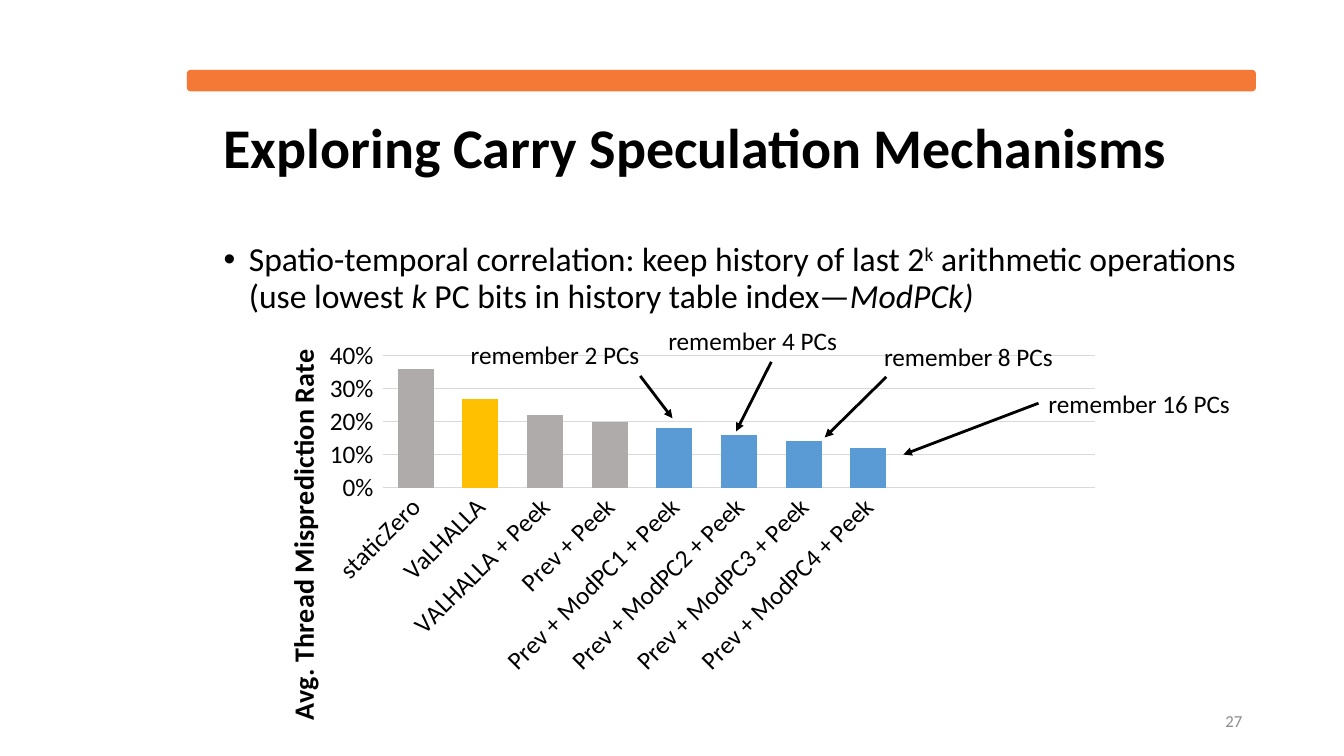
import dataclasses
import pptx
import pptx.chart.data
import pptx.dml.color
import pptx.enum.chart
import pptx.enum.shapes
import pptx.enum.text
import pptx.oxml
import pptx.oxml.ns
import pptx.util

ROWS = 75
CELL = pptx.util.Inches(7.5) / ROWS


@dataclasses.dataclass(frozen=True)
class Theme:
    font: str = "Calibri"
    ink: str = "000000"
    accent: str = "F47836"
    muted: str = "8C8C8C"
    grid: str = "D9D9D9"
    bar: str = "5B9BD5"
    baseline_bar: str = "AFABAB"
    highlight_bar: str = "FFC000"
    title: int = 40
    body: int = 24
    axis_title: int = 20
    label: int = 18
    number: int = 12


THEME = Theme()
ANCHOR = pptx.enum.text.MSO_ANCHOR
RATES = [
    ("staticZero", 0.36),
    ("VaLHALLA", 0.27),
    ("VALHALLA + Peek", 0.22),
    ("Prev + Peek", 0.2),
    ("Prev + ModPC1 + Peek", 0.18),
    ("Prev + ModPC2 + Peek", 0.16),
    ("Prev + ModPC3 + Peek", 0.14),
    ("Prev + ModPC4 + Peek", 0.12),
] + [("", None)] * 3
POINT_COLORS = [THEME.baseline_bar, THEME.highlight_bar, THEME.baseline_bar, THEME.baseline_bar]
CALLOUTS = [
    ("remember 2 PCs", (45.7, 33.2, 19, 4), (63.5, 37.3), (66.7, 41.5)),
    ("remember 4 PCs", (65.3, 31.8, 19, 4), (76.5, 35.9), (73, 42.8)),
    ("remember 8 PCs", (86.7, 33.4, 19, 4), (87.9, 37.4), (81.8, 43.4)),
    ("remember 16 PCs", (103, 38, 20.2, 4), None, (89.6, 45.1)),
]


def cells(*counts):
    return [pptx.util.Emu(round(count * CELL)) for count in counts]


def rgb(color):
    return pptx.dml.color.RGBColor.from_string(color)


def style(font, size, color=THEME.ink, bold=False):
    font.name = THEME.font
    font.size = pptx.util.Pt(size)
    font.bold = bold
    font.color.rgb = rgb(color)


def add_child(parent, tag, **attributes):
    child = pptx.oxml.parse_xml(f"<{tag} {pptx.oxml.ns.nsdecls(tag.split(':')[0])}/>")
    for name, value in attributes.items():
        child.set(name, str(value))
    parent.append(child)
    return child


def add_text(page, text, at, size, color=THEME.ink, bold=False, anchor=ANCHOR.TOP, wrap=True):
    box = page.shapes.add_textbox(*cells(*at))
    frame = box.text_frame
    frame.word_wrap = wrap
    frame.vertical_anchor = anchor
    if not wrap:
        frame.auto_size = pptx.enum.text.MSO_AUTO_SIZE.SHAPE_TO_FIT_TEXT
    para = frame.paragraphs[0]
    para.text = text
    style(para.font, size, color, bold)
    return box


def add_banner(page, at):
    banner = page.shapes.add_shape(pptx.enum.shapes.MSO_SHAPE.ROUNDED_RECTANGLE, *cells(*at))
    banner.shadow.inherit = False
    banner.fill.solid()
    banner.fill.fore_color.rgb = rgb(THEME.accent)
    banner.line.color.rgb = rgb(THEME.accent)
    banner.line.width = pptx.util.Pt(1)


def add_bullet(page, at):
    box = page.shapes.add_textbox(*cells(*at))
    box.text_frame.word_wrap = True
    para = box.text_frame.paragraphs[0]
    para.line_spacing = 0.9
    properties = para._p.get_or_add_pPr()
    indent = pptx.util.Inches(0.25)
    properties.set("marL", str(indent))
    properties.set("indent", str(-indent))
    add_child(properties, "a:buFont", typeface="Arial")
    add_child(properties, "a:buChar", char="•")
    style(para.font, THEME.body)
    para.add_run().text = "Spatio-temporal correlation: keep history of last 2"
    exponent = para.add_run()
    exponent.text = "k"
    exponent.font._element.set("baseline", "30000")
    para.add_run().text = " arithmetic operations"
    para.add_line_break()
    for text, italic in [
        ("(use lowest ", False),
        ("k", True),
        (" PC bits in history table index—", False),
        ("ModPCk)", True),
    ]:
        span = para.add_run()
        span.text = text
        span.font.italic = italic


def place(element, index, **shares):
    layout = element.find(pptx.oxml.ns.qn("c:layout"))
    if layout is None:
        layout = add_child(element, "c:layout")
        element.insert(index, layout)
    manual = add_child(layout, "c:manualLayout")
    if "w" in shares:
        add_child(manual, "c:layoutTarget", val="inner")
    for side in ("x", "y"):
        add_child(manual, f"c:{side}Mode", val="edge")
    for side, share in shares.items():
        add_child(manual, f"c:{side}", val=share)


def style_value_axis(axis):
    axis.minimum_scale = 0
    axis.maximum_scale = 0.4
    axis.major_unit = 0.1
    axis.tick_labels.number_format = "0%"
    axis.tick_labels.number_format_is_linked = False
    style(axis.tick_labels.font, THEME.label)
    axis.format.line.fill.background()
    axis.major_gridlines.format.line.color.rgb = rgb(THEME.grid)
    axis.major_gridlines.format.line.width = pptx.util.Pt(0.75)
    frame = axis.axis_title.text_frame
    frame.text = "Avg. Thread Misprediction Rate"
    style(frame.paragraphs[0].font, THEME.axis_title, bold=True)
    frame._txBody.bodyPr.set("rot", "-5400000")
    frame._txBody.bodyPr.set("vert", "horz")
    place(axis.axis_title._element, 1, x=0.02, y=0.02)


def style_category_axis(axis):
    axis.major_tick_mark = pptx.enum.chart.XL_TICK_MARK.NONE
    style(axis.tick_labels.font, THEME.label)
    axis.format.line.color.rgb = rgb(THEME.grid)
    axis.format.line.width = pptx.util.Pt(0.75)
    axis._element.txPr.bodyPr.set("rot", "-2700000")


def add_rate_chart(page, at):
    data = pptx.chart.data.CategoryChartData(number_format="0%")
    data.categories = [name for name, rate in RATES]
    data.add_series("Series 1", [rate for name, rate in RATES])
    kind = pptx.enum.chart.XL_CHART_TYPE.COLUMN_CLUSTERED
    chart = page.shapes.add_chart(kind, *cells(*at), data).chart
    chart.has_legend = False
    chart.has_title = False
    style(chart.font, THEME.label)
    plot = chart.plots[0]
    plot.gap_width = 80
    plot.vary_by_categories = False
    series = plot.series[0]
    series.format.fill.solid()
    series.format.fill.fore_color.rgb = rgb(THEME.bar)
    for index, color in enumerate(POINT_COLORS):
        fill = series.points[index].format.fill
        fill.solid()
        fill.fore_color.rgb = rgb(color)
    style_value_axis(chart.value_axis)
    style_category_axis(chart.category_axis)
    place(plot._element.getparent(), 0, x=0.144, y=0.04, w=0.838, h=0.23)


def add_callout(page, text, at, start, tip):
    label = add_text(page, text, at, THEME.label, wrap=False)
    straight = pptx.enum.shapes.MSO_CONNECTOR.STRAIGHT
    arrow = page.shapes.add_connector(straight, *cells(*(start or at[:2]), *tip))
    if start is None:
        arrow.begin_connect(label, 1)
    arrow.line.color.rgb = rgb(THEME.ink)
    arrow.line.width = pptx.util.Pt(2)
    add_child(arrow.line._get_or_add_ln(), "a:tailEnd", type="triangle")
    add_child(arrow._element.spPr, "a:effectLst")


def main():
    deck = pptx.Presentation()
    deck.slide_width = pptx.util.Inches(13.33)
    deck.slide_height = pptx.util.Inches(7.5)
    page = deck.slides.add_slide(deck.slide_layouts[6])
    add_banner(page, (18.6, 7, 105.9, 2))
    add_bullet(page, (21.2, 23.6, 105.6, 13.9))
    add_rate_chart(page, (25.9, 33, 84.2, 57))
    number = add_text(page, "27", (94.2, 69.5, 30, 4), THEME.number, THEME.muted, anchor=ANCHOR.MIDDLE)
    number.text_frame.paragraphs[0].alignment = pptx.enum.text.PP_ALIGN.RIGHT
    title = add_text(page, "Exploring Carry Speculation Mechanisms", (21.2, 10.4, 104.1, 9.1),
                     THEME.title, bold=True, anchor=ANCHOR.MIDDLE)
    title.text_frame.paragraphs[0].line_spacing = 0.9
    for callout in CALLOUTS:
        add_callout(page, *callout)
    deck.save("out.pptx")


if __name__ == "__main__":
    main()
